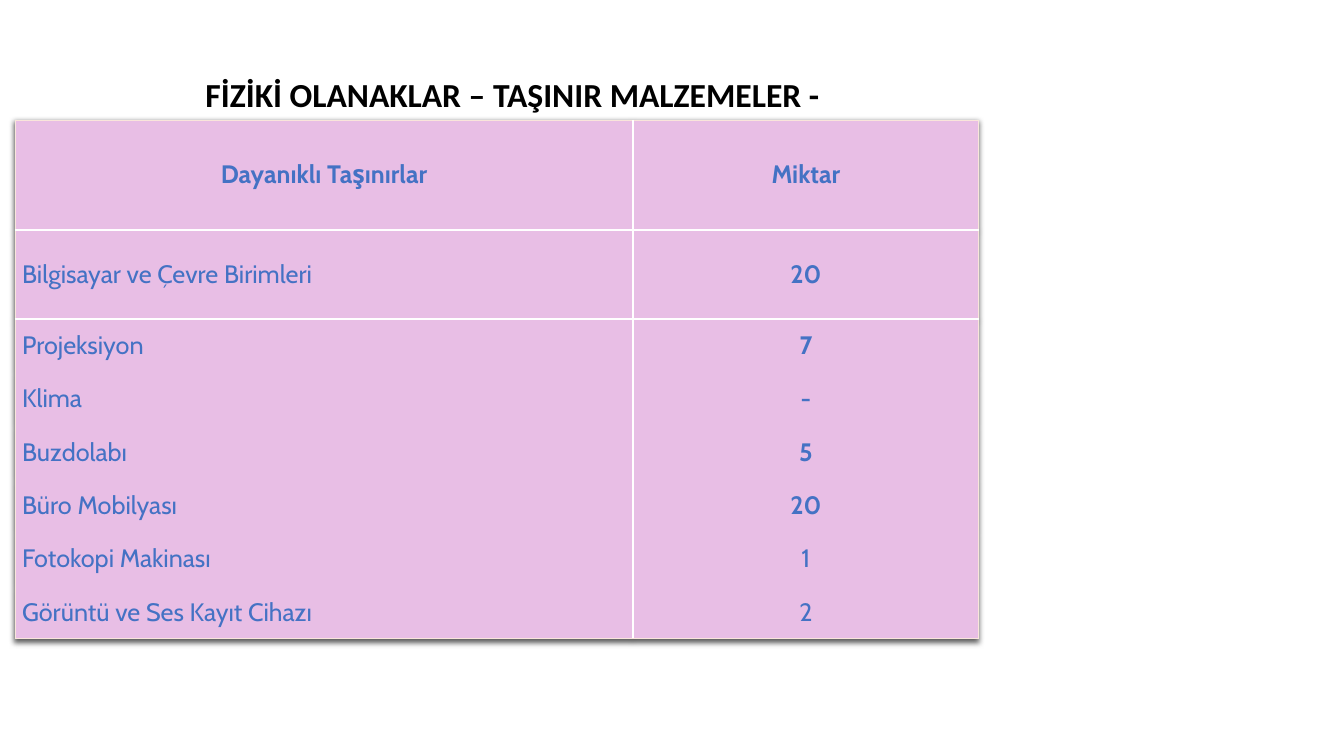
from dataclasses import dataclass

import pptx
import pptx.dml.color
import pptx.enum.text
import pptx.oxml
import pptx.oxml.ns
import pptx.util

Pt = pptx.util.Pt
ALIGN = pptx.enum.text.PP_ALIGN
MIDDLE = pptx.enum.text.MSO_ANCHOR.MIDDLE
NO_STYLE = "{2D5ABB26-0587-4C30-8999-92F81FD0307C}"


@dataclass(frozen=True)
class Theme:
    ink: str = "000000"
    text: str = "4472C4"
    fill: str = "E8BEE5"
    edge: str = "F9E5DB"
    rule: str = "FFFFFF"
    head: str = "Calibri"
    body: str = "Cabin"
    large: float = 24
    small: float = 18


THEME = Theme()
WIDTHS = [441.4, 247]
HEIGHTS = [78.5, 63.4] + [38.15] * 6
# Item, amount, whether the amount is bold
ITEMS = [
    ("Bilgisayar ve Çevre Birimleri", "20", True),
    ("Projeksiyon", "7", True),
    ("Klima", "-", True),
    ("Buzdolabı", "5", True),
    ("Büro Mobilyası", "20", True),
    ("Fotokopi Makinası", "1", False),
    ("Görüntü ve Ses Kayıt Cihazı", "2", False),
]


def color(code):
    return pptx.dml.color.RGBColor.from_string(code)


def parse(xml):
    space = pptx.oxml.ns.nsdecls("a")
    return pptx.oxml.parse_xml(xml.replace(">", f" {space}>", 1))


def write(frame, text, face, size, ink, bold, align=ALIGN.LEFT):
    para = frame.paragraphs[0]
    para.text = text
    para.alignment = align
    font = para.font
    font.name, font.size, font.bold = face, Pt(size), bold
    font.color.rgb = color(ink)


def add_title(slide, text):
    box = slide.shapes.add_textbox(Pt(139.7), Pt(49), Pt(532.8), Pt(36))
    box.text_frame.word_wrap = True
    write(box.text_frame, text, THEME.head, THEME.large, THEME.ink, True)


def draw_edges(cell, edges):
    """Edges are (side, colour, width) in the order L, R, T, B."""
    props = cell._tc.get_or_add_tcPr()
    for spot, (side, code, width) in enumerate(edges):
        props.insert(spot, parse(
            f'<a:ln{side} w="{Pt(width)}"><a:solidFill>'
            f'<a:srgbClr val="{code}"/></a:solidFill></a:ln{side}>'))


def fill_cell(cell, text, bold, align):
    cell.fill.solid()
    cell.fill.fore_color.rgb = color(THEME.fill)
    cell.vertical_anchor = MIDDLE
    cell.margin_left = cell.margin_right = Pt(5)
    cell.margin_top = cell.margin_bottom = 0
    write(cell.text_frame, text, THEME.body, THEME.small, THEME.text,
          bold, align)


def pick_edges(row, col):
    outer, inner = (THEME.edge, 0.75), (THEME.rule, 1.25)
    sides = [("L", *(inner if col else outer)),
             ("R", *(outer if col else inner))]
    if row == 0:
        sides.append(("T", *outer))
    elif row == 1:
        sides.append(("T", THEME.rule, 1.75))
    if row == 0:
        sides.append(("B", THEME.rule, 1.75))
    elif row == len(HEIGHTS) - 1:
        sides.append(("B", *outer))
    return sides


def style_table(table):
    """Drop the banded style and cast a soft shadow below the table."""
    table.first_row = table.horz_banding = False
    props = table._tbl.tblPr
    props.find(pptx.oxml.ns.qn("a:tableStyleId")).text = NO_STYLE
    props.insert(0, parse(
        f'<a:effectLst><a:outerShdw blurRad="{Pt(4)}" dist="{Pt(2)}" '
        'dir="5400000" rotWithShape="0"><a:srgbClr val="000000">'
        '<a:alpha val="63000"/></a:srgbClr></a:outerShdw></a:effectLst>'))


def add_stock(slide):
    frame = slide.shapes.add_table(
        len(HEIGHTS), len(WIDTHS), Pt(10.8), Pt(85.7),
        Pt(sum(WIDTHS)), Pt(sum(HEIGHTS)))
    table = frame.table
    style_table(table)
    for column, width in zip(table.columns, WIDTHS):
        column.width = Pt(width)
    for line, height in zip(table.rows, HEIGHTS):
        line.height = Pt(height)
    rows = [[("Dayanıklı Taşınırlar", True, ALIGN.CENTER),
             ("Miktar", True, ALIGN.CENTER)]]
    rows += [[(item, False, ALIGN.LEFT), (amount, bold, ALIGN.CENTER)]
             for item, amount, bold in ITEMS]
    for row, cells in enumerate(rows):
        for col, content in enumerate(cells):
            cell = table.cell(row, col)
            fill_cell(cell, *content)
            draw_edges(cell, pick_edges(row, col))


def main():
    deck = pptx.Presentation()
    deck.slide_width, deck.slide_height = Pt(960), Pt(540)
    slide = deck.slides.add_slide(deck.slide_layouts[6])
    add_title(slide, "FİZİKİ OLANAKLAR – TAŞINIR MALZEMELER -")
    add_stock(slide)
    deck.save("out.pptx")


if __name__ == "__main__":
    main()
